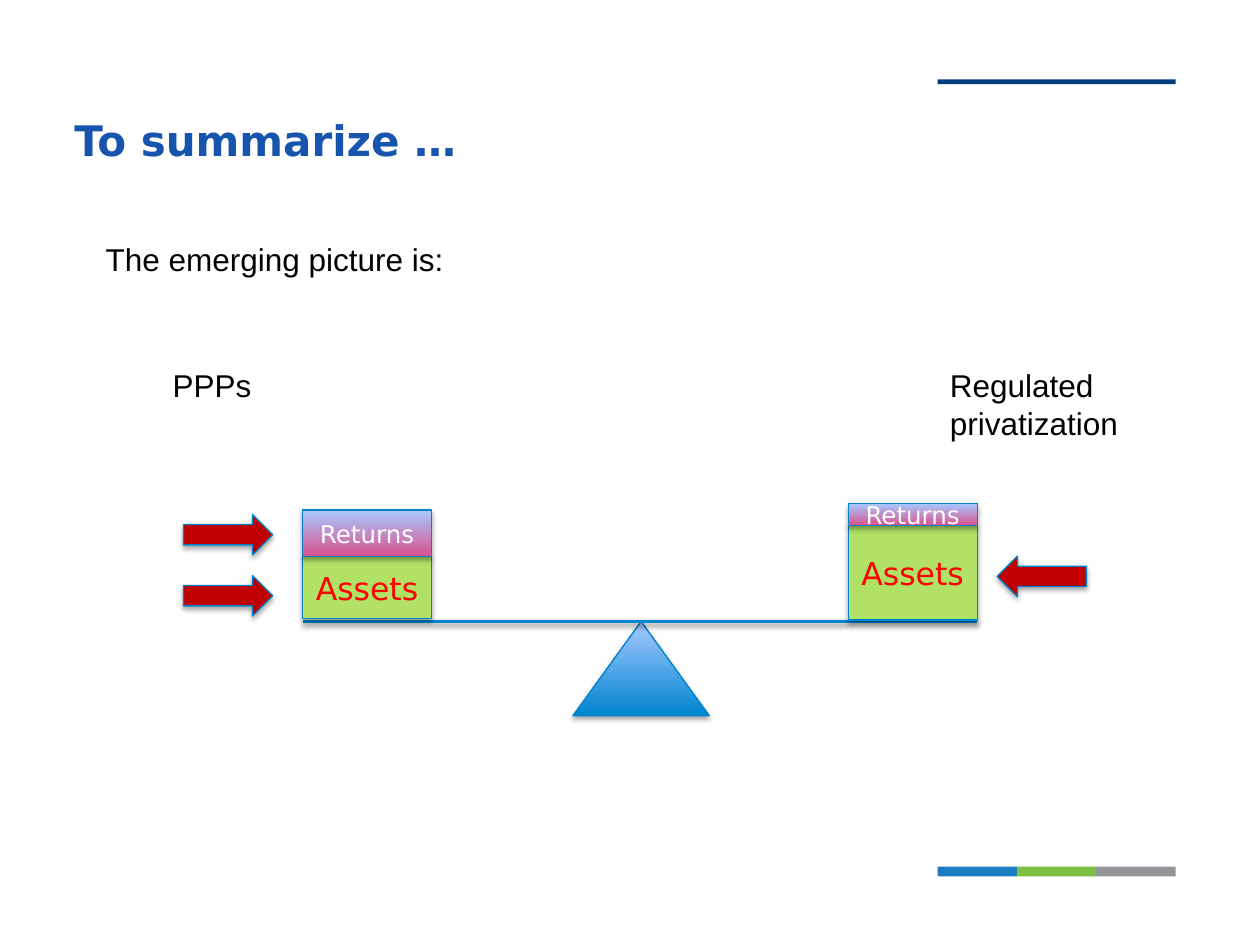
import pptx
import pptx.util
import pptx.dml.color
import pptx.enum.shapes
import pptx.enum.text
import pptx.oxml
import pptx.oxml.ns

Cm = pptx.util.Cm
Pt = pptx.util.Pt
RGB = pptx.dml.color.RGBColor
KIND = pptx.enum.shapes.MSO_SHAPE
ANCHOR = pptx.enum.text.MSO_ANCHOR
ALIGN = pptx.enum.text.PP_ALIGN

NAVY = RGB(0x00, 0x3E, 0x7E)
TITLE = RGB(0x17, 0x54, 0xAD)
STRIPES = [RGB(0x1C, 0x7C, 0xC2), RGB(0x7B, 0xC0, 0x42), RGB(0x93, 0x95, 0x98)]
EDGE = RGB(0x00, 0x82, 0xCB)
BLUE = RGB(0x00, 0x85, 0xD0)
PALE = RGB(0xA7, 0xC9, 0xFF)
PINK = RGB(0xDA, 0x51, 0x90)
GREEN = RGB(0xB1, 0xE2, 0x66)
CRIMSON = RGB(0xC0, 0x00, 0x00)
RED = RGB(0xFF, 0x00, 0x00)
WHITE = RGB(0xFF, 0xFF, 0xFF)
BLACK = RGB(0x00, 0x00, 0x00)

BOX_W = 2.6
BEAM_Y = 12.53


def add_shade(shape, dist, alpha):
    """Give a shape or connector a soft shadow straight below it."""
    shape._element.spPr.append(pptx.oxml.parse_xml(
        f'<a:effectLst {pptx.oxml.ns.nsdecls("a")}>'
        f'<a:outerShdw blurRad="{Pt(3.1)}" dist="{Pt(dist)}" dir="5400000" rotWithShape="0">'
        f'<a:srgbClr val="000000"><a:alpha val="{alpha * 1000}"/></a:srgbClr>'
        '</a:outerShdw></a:effectLst>'))


def add_run(frame, text, size, color, font, bold=False):
    run = frame.paragraphs[0].add_run()
    run.text = text
    run.font.size = Pt(size)
    run.font.name = font
    run.font.bold = bold
    run.font.color.rgb = color


def add_bar(slide, x, y, w, h, color):
    bar = slide.shapes.add_shape(KIND.RECTANGLE, Cm(x), Cm(y), Cm(w), Cm(h))
    bar.shadow.inherit = False
    bar.fill.solid()
    bar.fill.fore_color.rgb = color
    bar.line.fill.background()


def add_solid(slide, kind, x, y, w, h, color, fade=None):
    """Add an edged, shaded shape; fade is the colour at the top."""
    shape = slide.shapes.add_shape(kind, Cm(x), Cm(y), Cm(w), Cm(h))
    if fade is None:
        shape.fill.solid()
        shape.fill.fore_color.rgb = color
    else:
        shape.fill.gradient()
        shape.fill.gradient_angle = 90
        for stop, tint in zip(shape.fill.gradient_stops, (color, fade)):
            stop.color.rgb = tint
    shape.line.color.rgb = EDGE
    shape.line.width = Pt(0.75)
    add_shade(shape, 1.8, 35)
    return shape


def add_block(slide, x, y, h, text, size, ink, color, fade=None):
    block = add_solid(slide, KIND.RECTANGLE, x, y, BOX_W, h, color, fade)
    frame = block.text_frame
    frame.word_wrap = True
    frame.vertical_anchor = ANCHOR.MIDDLE
    frame.paragraphs[0].alignment = ALIGN.CENTER
    add_run(frame, text, size, ink, "DejaVu Sans")


def add_label(slide, x, y, w, h, text):
    box = slide.shapes.add_textbox(Cm(x), Cm(y), Cm(w), Cm(h))
    box.text_frame.word_wrap = True
    add_run(box.text_frame, text, 18, BLACK, "Arial")


def add_title(slide, text):
    box = slide.shapes.add_textbox(Cm(1.5), Cm(0.74), Cm(21.34), Cm(2.79))
    frame = box.text_frame
    frame.word_wrap = True
    frame.vertical_anchor = ANCHOR.BOTTOM
    frame.margin_left = frame.margin_right = frame.margin_top = 0
    frame.margin_bottom = Cm(0.2)
    add_run(frame, text, 24, TITLE, "DejaVu Sans", bold=True)


def add_beam(slide, start, end):
    beam = slide.shapes.add_connector(
        pptx.enum.shapes.MSO_CONNECTOR.STRAIGHT,
        Cm(start), Cm(BEAM_Y), Cm(end), Cm(BEAM_Y))
    beam.line.color.rgb = BLUE
    beam.line.width = Pt(2)
    add_shade(beam, 1.6, 38)


def main():
    deck = pptx.Presentation()
    deck.slide_width, deck.slide_height = Cm(25.4), Cm(19.05)
    slide = deck.slides.add_slide(deck.slide_layouts[6])

    # Page trim
    add_bar(slide, 18.9, 1.6, 4.8, 0.1, NAVY)
    for i, color in enumerate(STRIPES):
        add_bar(slide, 18.9 + 1.6 * i, 17.47, 1.6, 0.2, color)

    # Title
    add_title(slide, "To summarize …")

    # Balance: pivot and beam
    add_solid(slide, KIND.ISOSCELES_TRIANGLE, 11.55, BEAM_Y, 2.75, 1.9, BLUE, PALE)
    add_beam(slide, 6.1, 19.7)

    # Stacks: left edge, top, heights of returns and assets
    for x, top, gain, base in ((6.1, 10.28, 0.94, 1.25), (17.1, 10.15, 0.45, 1.9)):
        add_block(slide, x, top + gain, base, "Assets", 18, RED, GREEN)
        add_block(slide, x, top, gain, "Returns", 14, WHITE, PINK, PALE)

    # Labels
    add_label(slide, 1.88, 4.72, 22.23, 1.03, "The emerging picture is:")
    add_label(slide, 3.23, 7.25, 3, 1.03, "PPPs")
    add_label(slide, 18.9, 7.25, 4.4, 1.8, "Regulated privatization")

    # Arrows
    for x, y, turn in ((3.7, 10.37, 0), (3.7, 11.6, 0), (20.1, 11.21, 180)):
        arrow = add_solid(slide, KIND.RIGHT_ARROW, x, y, 1.8, 0.82, CRIMSON)
        arrow.rotation = turn

    deck.save("out.pptx")


if __name__ == "__main__":
    main()
